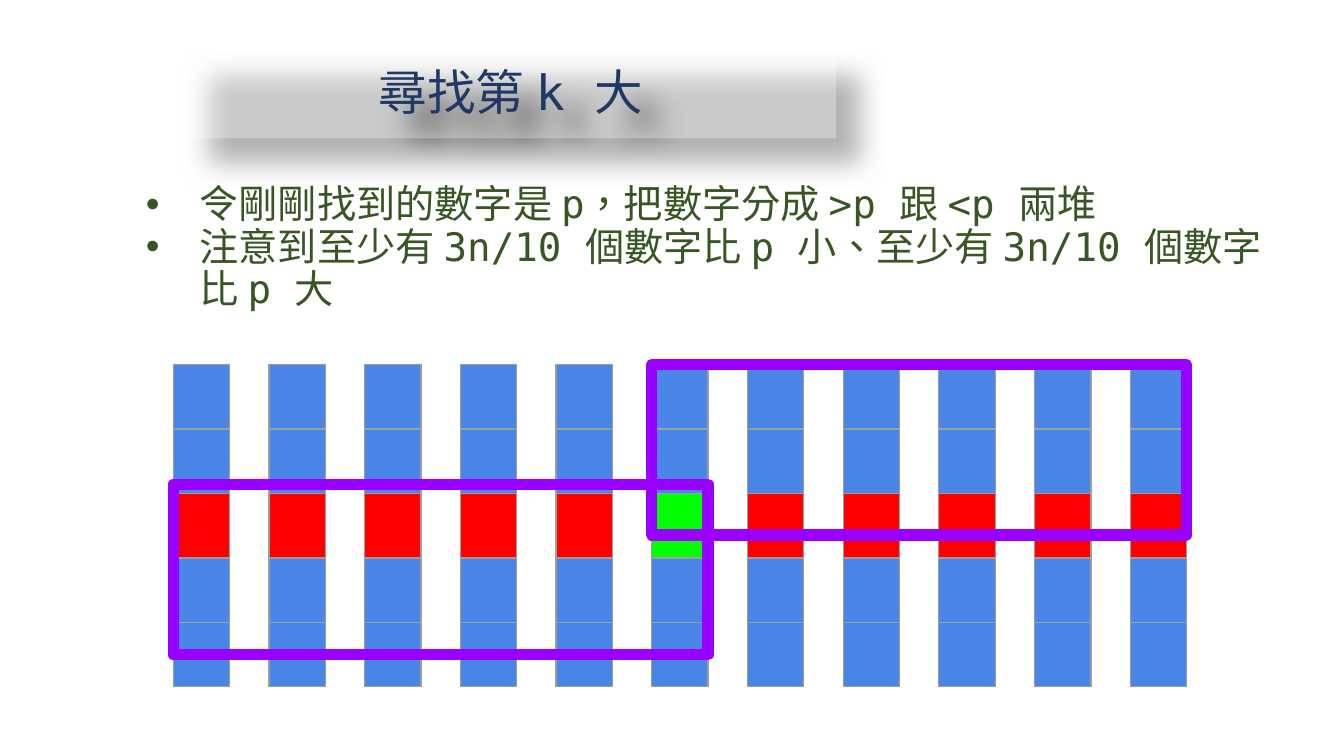
from lxml import etree
from pptx import Presentation
from pptx.dml import color
from pptx.enum import shapes, text
from pptx.oxml import ns
from pptx.util import Pt

TITLE = "尋找第 k 大"
POINTS = [
    "令剛剛找到的數字是 p，把數字分成 >p 跟 <p 兩堆",
    "注意到至少有 3n/10 個數字比 p 小、至少有 3n/10 個數字比 p 大",
]
FONT, LANGUAGE = "DejaVu Sans Mono", "zh-TW"
NAVY, FOREST, WHITE = "1F3864", "385623", "FFFFFF"
BLUE, RED, GREEN = "4A86E8", "FF0000", "00FF00"
GREY, PURPLE = "9E9E9E", "9900FF"

GROUPS, GROUP_SIZE = 11, 5
MIDDLE_GROUP, MIDDLE_ROW = GROUPS // 2, GROUP_SIZE // 2
GRID_LEFT, GRID_TOP = 92.8, 195.3
GROUP_STEP, CELL_WIDTH, CELL_HEIGHT = 51.27, 30.2, 34.55
REGION_WIDTH, REGION_HEIGHT = 286.5, 91.4
REGIONS = [
    (GRID_LEFT, 259.5),
    (GRID_LEFT + MIDDLE_GROUP * GROUP_STEP, GRID_TOP),
]


def paint(part, hex_color):
    if hasattr(part, "solid"):
        part.solid()
        part.fore_color.rgb = color.RGBColor.from_string(hex_color)
    else:
        part.rgb = color.RGBColor.from_string(hex_color)


def add_xml(parent, tag, **attributes):
    element = etree.SubElement(parent, ns.qn(tag))
    for name, value in attributes.items():
        element.set(name, str(value))
    return element


def add_color(parent, hex_color, opacity=None):
    shade = add_xml(parent, "a:srgbClr", val=hex_color)
    if opacity is not None:
        add_xml(shade, "a:alpha", val=opacity * 1000)


def write(paragraph, words, size, hex_color, align, bullet=None):
    properties = paragraph._p.get_or_add_pPr()
    paragraph.alignment = align
    paragraph.line_spacing = 0.9
    paragraph.space_before = Pt(0)
    if bullet:
        properties.set("marL", str(Pt(36)))
        properties.set("indent", str(Pt(-28.8)))
        add_color(add_xml(properties, "a:buClr"), hex_color)
        add_xml(properties, "a:buChar", char=bullet)
    run = paragraph.add_run()
    run.text = words
    run.font.size = Pt(size)
    run.font.name = FONT
    paint(run.font.color, hex_color)
    run._r.get_or_add_rPr().set("lang", LANGUAGE)


def place(holder, left, top, width, height, anchor):
    holder.left, holder.top = Pt(left), Pt(top)
    holder.width, holder.height = Pt(width), Pt(height)
    frame = holder.text_frame
    frame.word_wrap = True
    frame.auto_size = text.MSO_AUTO_SIZE.NONE
    frame.vertical_anchor = anchor
    frame.margin_left = frame.margin_right = Pt(5.4)
    frame.margin_top = frame.margin_bottom = Pt(5.4)
    return frame


def add_group(slide, index):
    group = slide.shapes.add_table(
        GROUP_SIZE, 1, Pt(GRID_LEFT + index * GROUP_STEP), Pt(GRID_TOP),
        Pt(CELL_WIDTH), Pt(CELL_HEIGHT * GROUP_SIZE)).table
    group.first_row = group.horz_banding = False
    median = GREEN if index == MIDDLE_GROUP else RED
    for row in range(GROUP_SIZE):
        cell = group.cell(row, 0)
        properties = cell._tc.get_or_add_tcPr()
        for side in ("a:lnL", "a:lnR", "a:lnT", "a:lnB"):
            border = add_xml(properties, side, w=Pt(0.75))
            add_color(add_xml(border, "a:solidFill"), GREY)
        paint(cell.fill, median if row == MIDDLE_ROW else BLUE)


def add_region(slide, left, top):
    region = slide.shapes.add_shape(
        shapes.MSO_SHAPE.RECTANGLE, Pt(left), Pt(top),
        Pt(REGION_WIDTH), Pt(REGION_HEIGHT))
    region.shadow.inherit = False
    region.fill.background()
    paint(region.line.fill, PURPLE)
    region.line.width = Pt(6)
    add_xml(region.line._get_or_add_ln(), "a:round")


def main():
    deck = Presentation()
    deck.slide_width, deck.slide_height = Pt(720), Pt(405)
    slide = deck.slides.add_slide(deck.slide_layouts[1])

    title = slide.shapes.title
    heading = place(title, 99.4, 27.4, 348.5, 46.8, text.MSO_ANCHOR.MIDDLE)
    write(heading.paragraphs[0], TITLE, 26, NAVY, text.PP_ALIGN.CENTER)
    paint(title.fill, WHITE)
    add_xml(title.fill._xPr.solidFill[0], "a:alpha", val=30000)
    effects = add_xml(title._element.spPr, "a:effectLst")
    shadow = add_xml(effects, "a:outerShdw", blurRad=Pt(15), dist=Pt(18),
                     dir=45 * 60000, algn="tl", rotWithShape=0)
    add_color(shadow, "000000", 30)

    body = place(slide.placeholders[1], 65.5, 93.6, 620.6, 273.6,
                 text.MSO_ANCHOR.TOP)
    for number, point in enumerate(POINTS):
        paragraph = body.add_paragraph() if number else body.paragraphs[0]
        write(paragraph, point, 21, FOREST, text.PP_ALIGN.LEFT, bullet="•")

    for index in range(GROUPS):
        add_group(slide, index)
    for left, top in REGIONS:
        add_region(slide, left, top)
    deck.save("out.pptx")


if __name__ == "__main__":
    main()
